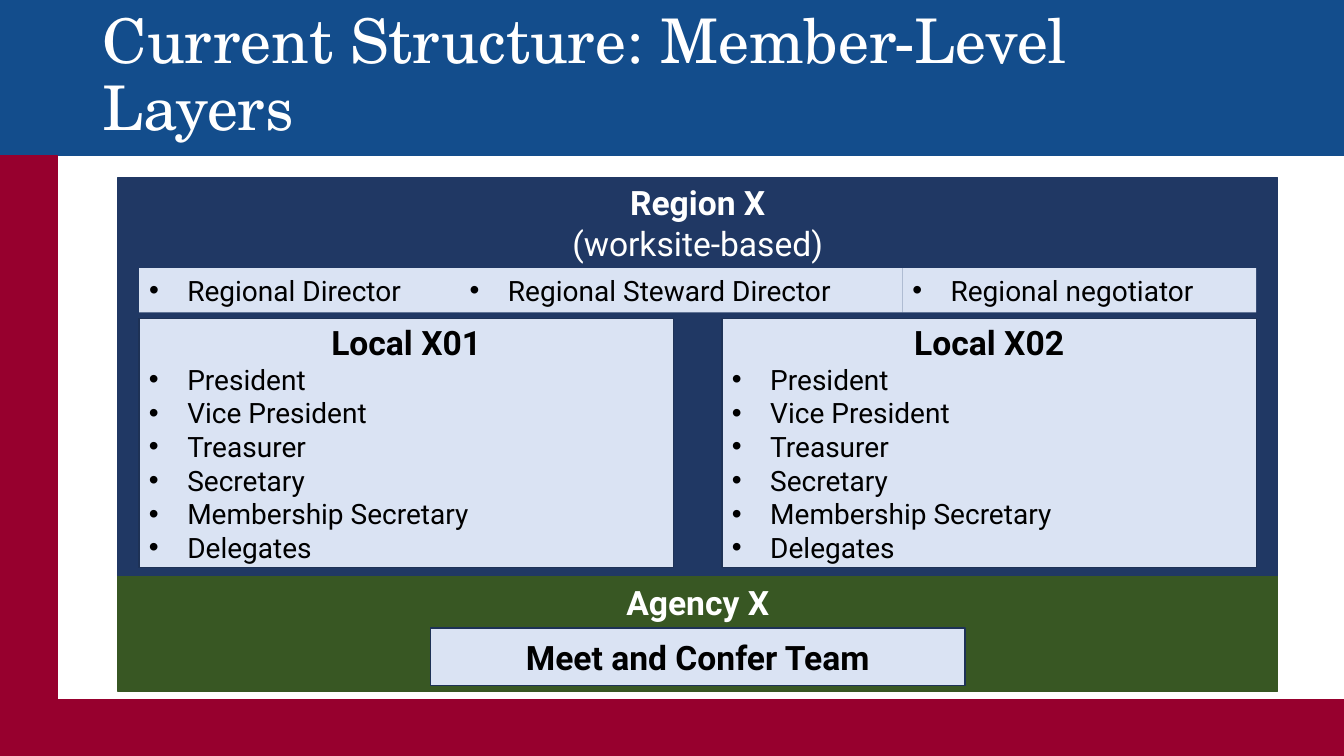
from dataclasses import dataclass
from typing import Optional

from lxml import etree
from pptx import Presentation
from pptx.dml.color import RGBColor
from pptx.enum.shapes import MSO_SHAPE
from pptx.enum.text import MSO_ANCHOR, PP_ALIGN
from pptx.oxml.ns import qn
from pptx.util import Inches, Pt

RECTANGLE = MSO_SHAPE.RECTANGLE
TOP, MIDDLE = MSO_ANCHOR.TOP, MSO_ANCHOR.MIDDLE
LEFT, CENTER = PP_ALIGN.LEFT, PP_ALIGN.CENTER

WHITE = RGBColor(0xFF, 0xFF, 0xFF)
BLACK = RGBColor(0x00, 0x00, 0x00)
BLUE = RGBColor(0x13, 0x4D, 0x8C)
CRIMSON = RGBColor(0x97, 0x00, 0x2E)
NAVY = RGBColor(0x20, 0x38, 0x64)
GREEN = RGBColor(0x38, 0x57, 0x23)
PALE_BLUE = RGBColor(0xDA, 0xE3, 0xF3)
CARD_EDGE = RGBColor(0x1E, 0x32, 0x56)

BODY_FONT = "Roboto"
TITLE_FONT = "TeX Gyre Schola"
BULLET_INDENT = Inches(0.38)

SLIDE_WIDTH = Inches(13.33)
SLIDE_HEIGHT = Inches(7.5)


@dataclass(frozen=True)
class Area:
    """A rectangle in percent of the slide's width and height."""
    left: float
    top: float
    width: float
    height: float

    def to_emu(self) -> tuple[int, int, int, int]:
        return (int(SLIDE_WIDTH * self.left / 100), int(SLIDE_HEIGHT * self.top / 100),
                int(SLIDE_WIDTH * self.width / 100), int(SLIDE_HEIGHT * self.height / 100))


@dataclass(frozen=True)
class TextLine:
    text: str
    size: int = 24
    bold: bool = True
    bulleted: bool = False


@dataclass(frozen=True)
class Block:
    area: Area
    fill: RGBColor
    edge: Optional[RGBColor] = None
    lines: tuple[TextLine, ...] = ()
    text_color: RGBColor = BLACK
    anchor: MSO_ANCHOR = MIDDLE


def bullet(text: str) -> TextLine:
    return TextLine(text, 20, bold=False, bulleted=True)


def add_bullet(paragraph) -> None:
    properties = paragraph._p.get_or_add_pPr()
    properties.set("marL", str(BULLET_INDENT))
    properties.set("indent", str(-BULLET_INDENT))
    etree.SubElement(properties, qn("a:buFont")).set("typeface", "Arial")
    etree.SubElement(properties, qn("a:buChar")).set("char", "•")


def write_lines(text_frame, lines: tuple[TextLine, ...], color: RGBColor) -> None:
    for index, line in enumerate(lines):
        paragraph = text_frame.add_paragraph() if index else text_frame.paragraphs[0]
        paragraph.text = line.text
        paragraph.alignment = LEFT if line.bulleted else CENTER
        if line.bulleted:
            add_bullet(paragraph)
        paragraph.font.name = BODY_FONT
        paragraph.font.size = Pt(line.size)
        paragraph.font.bold = line.bold
        paragraph.font.color.rgb = color


def add_block(slide, block: Block) -> None:
    shape = slide.shapes.add_shape(RECTANGLE, *block.area.to_emu())
    shape.shadow.inherit = False
    shape.fill.solid()
    shape.fill.fore_color.rgb = block.fill
    if block.edge is None:
        shape.line.fill.background()
    else:
        shape.line.color.rgb = block.edge
        shape.line.width = Pt(1)
    shape.text_frame.word_wrap = True
    shape.text_frame.vertical_anchor = block.anchor
    write_lines(shape.text_frame, block.lines, block.text_color)


def add_title(slide, text: str, area: Area) -> None:
    text_frame = slide.shapes.add_textbox(*area.to_emu()).text_frame
    text_frame.word_wrap = True
    text_frame.vertical_anchor = MIDDLE
    paragraph = text_frame.paragraphs[0]
    paragraph.text = text
    paragraph.line_spacing = 0.9
    paragraph.font.name = TITLE_FONT
    paragraph.font.size = Pt(44)
    paragraph.font.color.rgb = WHITE


BAND_HEIGHT = 20.53
SIDE_WIDTH = 4.28
FOOTER_TOP = 92.53
PANEL_LEFT, PANEL_WIDTH = 8.78, 86.27
REGION_TOP, REGION_HEIGHT = 23.47, 52.8
AGENCY_TOP = REGION_TOP + REGION_HEIGHT
PANEL_MARGIN = 1.57
INNER_LEFT = PANEL_LEFT + PANEL_MARGIN
INNER_RIGHT = PANEL_LEFT + PANEL_WIDTH - PANEL_MARGIN
CARD_WIDTH = 39.76

FRAME = (
    Block(Area(0, 0, 100, BAND_HEIGHT), BLUE, BLUE),
    Block(Area(0, BAND_HEIGHT, SIDE_WIDTH, 100 - BAND_HEIGHT), CRIMSON, CRIMSON),
    Block(Area(SIDE_WIDTH, FOOTER_TOP, 100 - SIDE_WIDTH, 100 - FOOTER_TOP), CRIMSON, CRIMSON),
)
PANELS = (
    Block(Area(PANEL_LEFT, REGION_TOP, PANEL_WIDTH, REGION_HEIGHT), NAVY, NAVY,
          (TextLine("Region X"), TextLine("(worksite-based)", bold=False)), WHITE, TOP),
    Block(Area(PANEL_LEFT, AGENCY_TOP, PANEL_WIDTH, 15.2), GREEN, GREEN,
          (TextLine("Agency X"),), WHITE, TOP),
)
LOCAL_OFFICERS = ("President", "Vice President", "Treasurer", "Secretary",
                  "Membership Secretary", "Delegates")
LOCALS = (("Local X01", INNER_LEFT), ("Local X02", INNER_RIGHT - CARD_WIDTH))
REGIONAL_ROLES = (("Regional Director", 23.86), ("Regional Steward Director", 32.93),
                  ("Regional negotiator", 26.33))


def local_card(name: str, left: float) -> Block:
    lines = (TextLine(name), *map(bullet, LOCAL_OFFICERS))
    return Block(Area(left, 42.13, CARD_WIDTH, 32.93), PALE_BLUE, CARD_EDGE, lines)


def team_card() -> Block:
    left = PANEL_LEFT + (PANEL_WIDTH - CARD_WIDTH) / 2
    return Block(Area(left, 83.07, CARD_WIDTH, 7.6), PALE_BLUE, CARD_EDGE,
                 (TextLine("Meet and Confer Team"),))


def regional_strip() -> list[Block]:
    blocks, left = [], INNER_LEFT
    for role, width in REGIONAL_ROLES:
        blocks.append(Block(Area(left, 35.47, width, 5.87), PALE_BLUE, lines=(bullet(role),)))
        left += width
    return blocks


def main() -> None:
    presentation = Presentation()
    presentation.slide_width = SLIDE_WIDTH
    presentation.slide_height = SLIDE_HEIGHT
    slide = presentation.slides.add_slide(presentation.slide_layouts[6])
    cards = [local_card(name, left) for name, left in LOCALS]
    for block in (*FRAME, *PANELS, *cards, team_card(), *regional_strip()):
        add_block(slide, block)
    add_title(slide, "Current Structure: Member-Level Layers",
              Area(6.9, 0.53, PANEL_WIDTH, 19.33))
    presentation.save("out.pptx")


if __name__ == "__main__":
    main()
